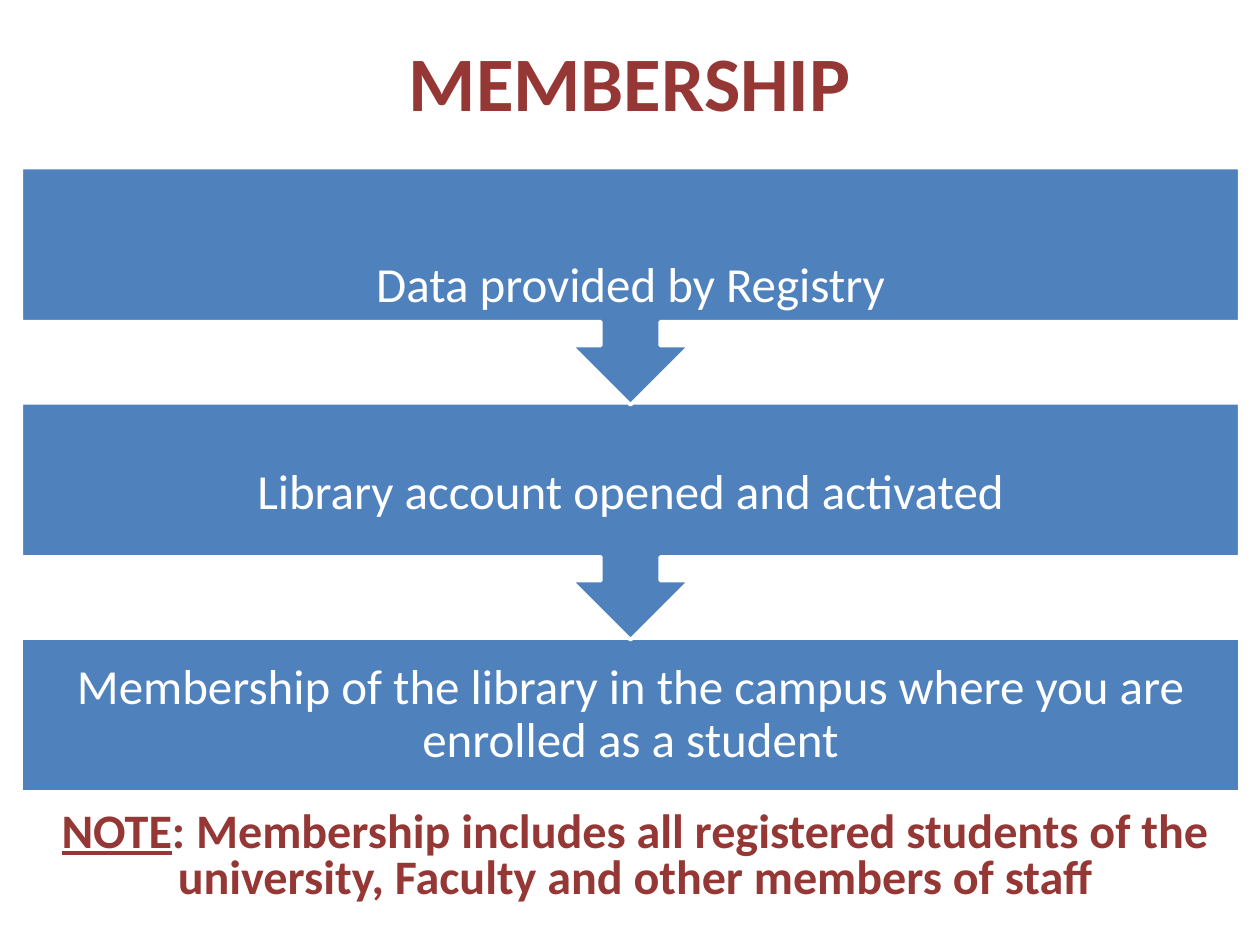
from pptx import Presentation
from pptx.dml.color import RGBColor
from pptx.enum.shapes import MSO_SHAPE as Shape
from pptx.enum.text import MSO_ANCHOR as Anchor, PP_ALIGN as Align
from pptx.util import Cm, Pt

BLUE = RGBColor(0x4F, 0x81, 0xBD)
MAROON = RGBColor(0x95, 0x37, 0x35)
WHITE = RGBColor(0xFF, 0xFF, 0xFF)

LEFT, WIDTH = 0.43, 24.56
FIRST_TOP, PITCH = 3.38, 4.74
CALLOUT_HEIGHT, BAR_HEIGHT = 4.78, 3.1
INSET = 0.56

# Step text and the extra bottom inset that lifts it
STEPS = [
    ("Data provided by Registry", 0),
    ("Library account opened and activated", 1.1),
    ("Membership of the library in the campus where you are enrolled as a student", 0),
]


class SlideBuilder:
    font = "Calibri"

    def __init__(self, page):
        self.page = page

    def block(self, kind, left, top, width, height, rotation=0):
        block = self.page.shapes.add_shape(
            kind, Cm(left), Cm(top), Cm(width), Cm(height))
        block.rotation = rotation
        block.shadow.inherit = False
        block.fill.solid()
        block.fill.fore_color.rgb = BLUE
        block.line.color.rgb = WHITE
        block.line.width = Pt(2)

    def text(self, spans, left, top, width, height, size, color,
             bold=False, spacing=1.0, inset=None, lift=0):
        """Add centred text; spans holds (wording, underlined) pairs."""
        box = self.page.shapes.add_textbox(
            Cm(left), Cm(top), Cm(width), Cm(height))
        frame = box.text_frame
        frame.word_wrap = True
        frame.vertical_anchor = Anchor.MIDDLE
        if inset is not None:
            frame.margin_left = frame.margin_right = frame.margin_top = Cm(inset)
            frame.margin_bottom = Cm(inset + lift)
        para = frame.paragraphs[0]
        para.alignment = Align.CENTER
        para.line_spacing = spacing
        para.font.name = self.font
        para.font.size = Pt(size)
        para.font.bold = bold
        para.font.color.rgb = color
        for wording, underlined in spans:
            span = para.add_run()
            span.text = wording
            if underlined:
                span.font.underline = True


def main():
    deck = Presentation()
    deck.slide_width, deck.slide_height = Cm(25.4), Cm(19.05)
    builder = SlideBuilder(deck.slides.add_slide(deck.slide_layouts[6]))

    # Title
    builder.text([("MEMBERSHIP", False)], 1.27, 0.43, 22.86, 2.41,
                 44, MAROON, bold=True)

    # Steps, last one at the back so each arrow lies over the next bar
    last = len(STEPS) - 1
    for index, (wording, lift) in reversed(list(enumerate(STEPS))):
        top = FIRST_TOP + index * PITCH
        if index == last:
            kind, height, rotation = Shape.RECTANGLE, BAR_HEIGHT, 0
        else:
            kind, height, rotation = Shape.UP_ARROW_CALLOUT, CALLOUT_HEIGHT, 180
        builder.block(kind, LEFT, top, WIDTH, height, rotation)
        builder.text([(wording, False)], LEFT, top, WIDTH, height,
                     28, WHITE, spacing=0.9, inset=INSET, lift=lift)

    # Note
    note = [
        ("NOTE", True),
        (": Membership includes all registered students of the university, "
         "Faculty and other members of staff", False),
    ]
    builder.text(note, 0.84, 16.08, 23.93, 2.41, 27.5, MAROON,
                 bold=True, spacing=0.8)

    deck.save("out.pptx")


if __name__ == "__main__":
    main()
